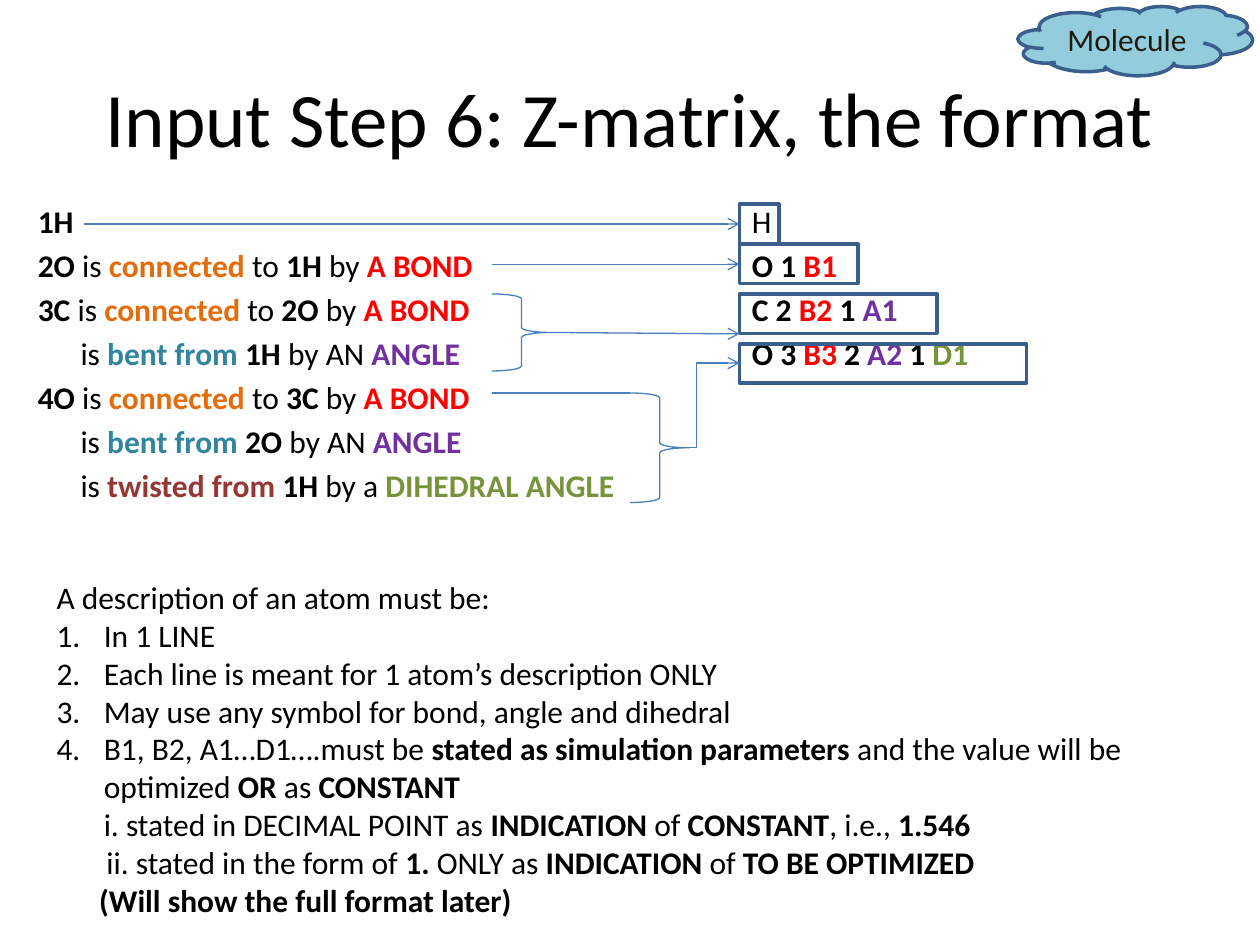
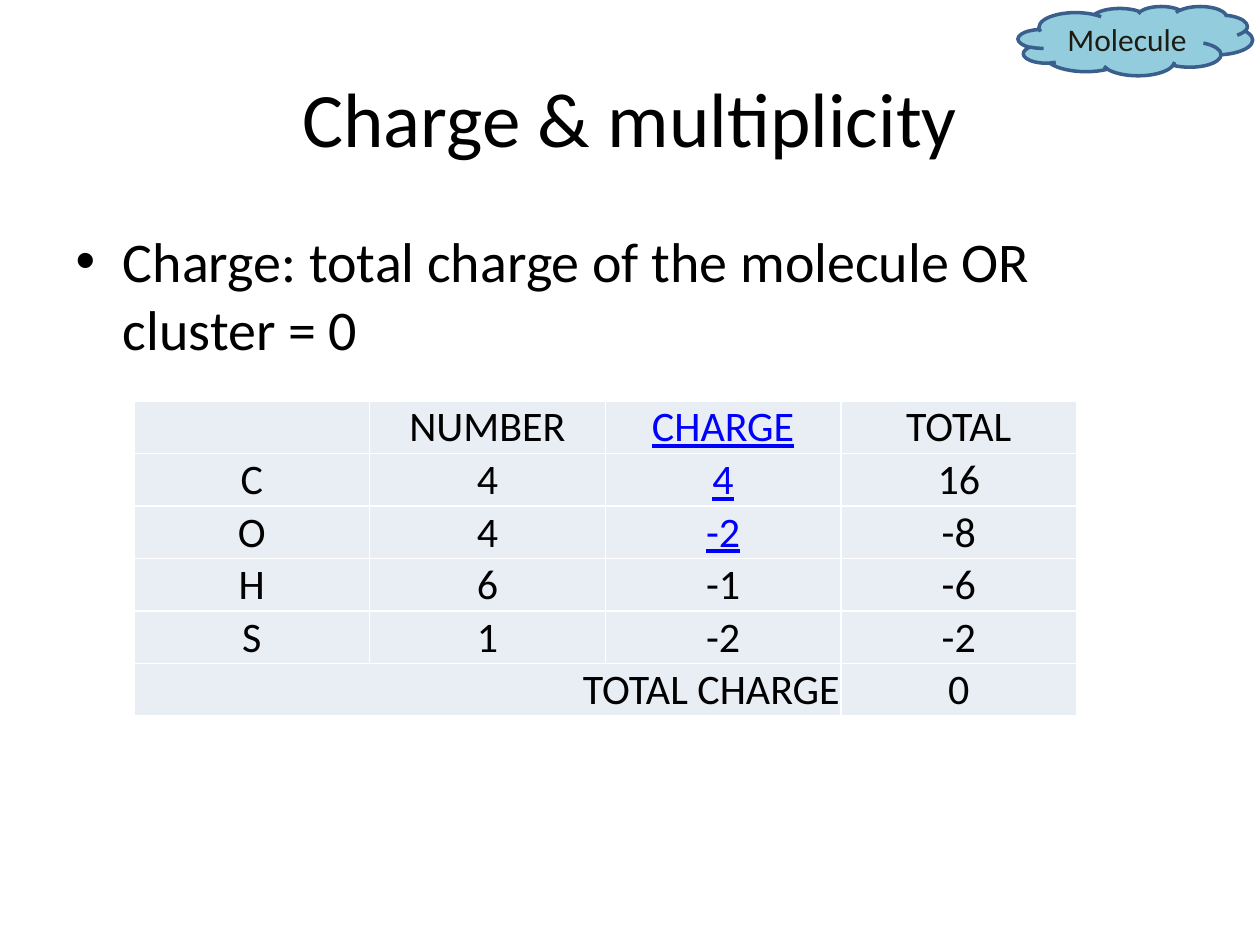
from dataclasses import dataclass

from pptx import Presentation
from pptx.dml.color import RGBColor
from pptx.enum import shapes, text
from pptx.oxml import ns, xmlchemy
from pptx.util import Pt

# Content: a line is a list of pieces, each plain text or (text, style)
TAG = "Molecule"
FORMAT_TITLE = "Input Step 6: Z-matrix, the format"
CHARGE_TITLE = "Charge & multiplicity"
CHARGE_NOTE = "Charge: total charge of the molecule OR cluster = 0"

BOND = ("A BOND", "bond")
ANGLE = ("ANGLE", "angle")
# (left indent, pieces)
ATOM_LINES = [
    (0, [("1H", "bold")]),
    (0, [("2O ", "bold"), "is ", ("connected ", "connect"), "to ", ("1H ", "bold"), "by ", BOND]),
    (0, [("3C ", "bold"), "is ", ("connected", "connect"), " to ", ("2O ", "bold"), "by ", BOND]),
    (24.4, ["is ", ("bent from ", "bend"), ("1H ", "bold"), "by AN ", ANGLE]),
    (0, [("4O ", "bold"), "is ", ("connected", "connect"), " to ", ("3C ", "bold"), "by ", BOND]),
    (24.4, ["is ", ("bent from ", "bend"), ("2O", "bold"), " by AN ", ANGLE]),
    (24.4, ["is ", ("twisted from ", "twist"), ("1H ", "bold"), "by a ",
            ("DIHEDRAL ANGLE", "dihedral")]),
]
MATRIX_LINES = [
    (0, ["H"]),
    (0, [("O 1 ", "bold"), ("B1", "bond")]),
    (0, [("C 2 ", "bold"), ("B2 ", "bond"), ("1 ", "bold"), ("A1", "angle")]),
    (0, [("O 3 ", "bold"), ("B3 ", "bond"), ("2 ", "bold"), ("A2", "angle"),
         (" 1 ", "bold"), ("D1", "dihedral")]),
]
INDICATION = ("INDICATION", "bold")
RULES_LEAD = (0, ["A description of an atom must be:"])
RULES = [
    (27, ["In 1 LINE"]),
    (27, ["Each line is meant for 1 atom’s description ONLY"]),
    (27, ["May use any symbol for bond, angle and dihedral"]),
    (27, ["B1, B2, A1…D1….must be ", ("stated as simulation parameters", "bold"),
          " and the value will be optimized ", ("OR", "bold"), " as ", ("CONSTANT", "bold"), "\n",
          "i. stated in DECIMAL POINT as ", INDICATION, " of ", ("CONSTANT", "bold"),
          ", i.e., ", ("1.546", "bold")]),
]
RULES_TAIL = [
    (28.5, ["ii. stated in the form of ", ("1.", "bold"), " ONLY as ", INDICATION, " of ",
            ("TO BE OPTIMIZED", "bold")]),
    (24.4, [("(Will show the full format later)", "bold")]),
]
CHARGES = [
    ("", "NUMBER", "CHARGE", "TOTAL"),
    ("C", "4", "4", "16"),
    ("O", "4", "-2", "-8"),
    ("H", "6", "-1", "-6"),
    ("S", "1", "-2", "-2"),
    ("TOTAL CHARGE", "", "", "0"),
]
LINKED_CELLS = {(0, 2), (1, 2), (2, 2)}


@dataclass(frozen=True)
class Theme:
    font: str = "Calibri"
    title: float = 44
    body: float = 32
    table: float = 24
    small: float = 18
    ink: str = "000000"
    link: str = "0000FF"
    cell: str = "E9EDF4"
    grid: str = "FFFFFF"
    cloud: str = "93CDDD"
    cloud_ink: str = "1E1C11"
    frame: str = "3A5F8C"
    wire: str = "4B7EBC"


THEME = Theme()
STYLE_COLOURS = {"bold": THEME.ink, "connect": "E46C0A", "bond": "FF0000", "bend": "31859C",
                 "angle": "7030A0", "twist": "953735", "dihedral": "77933C"}

# Geometry in points
MATRIX_LEFT = 422.6
FRAME_HEIGHT = 22.5
FRAMES = [(116.6, 22.5), (139.5, 67.7), (168, 113), (196.5, 164)]  # top, width
BRACES = [(360, 224.6, 34, 62.6), (281, 168, 34, 44)]
LINKS = [  # start x, start y, end x, end y, arrow
    (281, 224.6, 360, 224.6, False),
    (315, 190, MATRIX_LEFT, 190.8, True),
    (281, 151, MATRIX_LEFT, 151, True),
    (48, 128, MATRIX_LEFT, 128, True),
]
ELBOW = (394, 255.6, MATRIX_LEFT, 207.5, True)
ELBOW_BEND = 14000
TABLE_LEFT, TABLE_TOP, COLUMN_WIDTH, ROW_HEIGHT = 76.5, 229, 134.7, 29.5


def rgb(colour):
    return RGBColor.from_string(colour)


def child(parent, tag, **attributes):
    element = xmlchemy.OxmlElement(tag)
    for name, value in attributes.items():
        element.set(name, str(value))
    parent.append(element)
    return element


def set_font(font, size, colour=THEME.ink):
    font.name, font.size = THEME.font, Pt(size)
    font.color.rgb = rgb(colour)


def place(shape, left, top, width, height):
    shape.left, shape.top, shape.width, shape.height = map(Pt, (left, top, width, height))


def write_lines(frame, lines, space=0, numbered=()):
    """Fill a text frame with styled lines, numbering the chosen ones."""
    frame.word_wrap = True
    frame.auto_size = text.MSO_AUTO_SIZE.NONE
    for index, (indent, pieces) in enumerate(lines):
        paragraph = frame.paragraphs[0] if index == 0 else frame.add_paragraph()
        paragraph.space_before = Pt(space if index else 0)
        properties = paragraph._p.get_or_add_pPr()
        properties.set("marL", str(Pt(indent)))
        if index in numbered:
            properties.set("indent", str(-Pt(indent)))
            child(properties, "a:buFont", typeface="+mj-lt")
            child(properties, "a:buAutoNum", type="arabicPeriod")
        else:
            properties.set("indent", "0")
            child(properties, "a:buNone")
        set_font(paragraph.font, THEME.small)
        for piece in pieces:
            if piece == "\n":
                paragraph.add_line_break()
                continue
            words, style = (piece, None) if isinstance(piece, str) else piece
            run = paragraph.add_run()
            run.text = words
            set_font(run.font, THEME.small, STYLE_COLOURS.get(style, THEME.ink))
            run.font.bold = style is not None


def add_outline(slide, kind, box, colour, width, fill=None):
    shape = slide.shapes.add_shape(kind, *map(Pt, box))
    shape.shadow.inherit = False
    if fill:
        shape.fill.solid()
        shape.fill.fore_color.rgb = rgb(fill)
    else:
        shape.fill.background()
    shape.line.color.rgb = rgb(colour)
    shape.line.width = Pt(width)
    return shape


def add_link(slide, kind, x1, y1, x2, y2, arrow):
    link = slide.shapes.add_connector(kind, *map(Pt, (x1, y1, x2, y2)))
    link.line.color.rgb = rgb(THEME.wire)
    link.line.width = Pt(0.75)
    if arrow:
        child(link.line._get_or_add_ln(), "a:tailEnd", type="arrow")
    child(link._element.spPr, "a:effectLst")
    return link


def add_slide(deck, title):
    slide = deck.slides.add_slide(deck.slide_layouts[1])
    slide.shapes.title.text = title
    set_font(slide.shapes.title.text_frame.paragraphs[0].font, THEME.title)
    return slide


def add_tag(slide):
    cloud = add_outline(slide, shapes.MSO_SHAPE.CLOUD, (581.8, 3.6, 134, 39.6),
                        THEME.frame, 2, THEME.cloud)
    cloud.text_frame.text = TAG
    cloud.text_frame.vertical_anchor = text.MSO_ANCHOR.MIDDLE
    label = cloud.text_frame.paragraphs[0]
    label.alignment = text.PP_ALIGN.CENTER
    set_font(label.font, THEME.small, THEME.cloud_ink)


def build_format_slide(deck):
    slide = add_slide(deck, FORMAT_TITLE)
    # Atom descriptions and the matching matrix rows
    atoms = slide.placeholders[1]
    place(atoms, 14.4, 111.6, 375, 201)
    write_lines(atoms.text_frame, ATOM_LINES, space=3.6)
    matrix = slide.shapes.add_textbox(*map(Pt, (MATRIX_LEFT, 111.6, 176.4, 201)))
    write_lines(matrix.text_frame, MATRIX_LINES, space=3.6)

    # Frames, braces and links
    for top, width in FRAMES:
        add_outline(slide, shapes.MSO_SHAPE.RECTANGLE,
                    (MATRIX_LEFT, top, width, FRAME_HEIGHT), THEME.frame, 2)
    for box in BRACES:
        add_outline(slide, shapes.MSO_SHAPE.RIGHT_BRACE, box, THEME.wire, 0.75)
    for link in LINKS:
        add_link(slide, shapes.MSO_CONNECTOR.STRAIGHT, *link)
    elbow = add_link(slide, shapes.MSO_CONNECTOR.ELBOW, *ELBOW)
    bends = elbow._element.spPr.find(ns.qn("a:prstGeom")).find(ns.qn("a:avLst"))
    child(bends, "a:gd", name="adj1", fmla=f"val {ELBOW_BEND}")

    # Rules
    rules = slide.shapes.add_textbox(*map(Pt, (25.2, 326.9, 669, 225)))
    write_lines(rules.text_frame, [RULES_LEAD, *RULES, *RULES_TAIL],
                numbered=range(1, len(RULES) + 1))
    add_tag(slide)


def format_cell(cell, words, linked, alignment):
    cell.fill.solid()
    cell.fill.fore_color.rgb = rgb(THEME.cell)
    cell.margin_left = cell.margin_right = cell.margin_top = Pt(0.72)
    cell.margin_bottom = 0
    cell.vertical_anchor = text.MSO_ANCHOR.MIDDLE
    cell.text = words
    paragraph = cell.text_frame.paragraphs[0]
    paragraph.alignment = alignment
    set_font(paragraph.font, THEME.table, THEME.link if linked else THEME.ink)
    paragraph.font.underline = linked
    # Borders come before the fill in the cell properties
    properties = cell._tc.get_or_add_tcPr()
    for position, side in enumerate(("a:lnL", "a:lnR", "a:lnT", "a:lnB")):
        border = child(properties, side, w=Pt(1))
        child(child(border, "a:solidFill"), "a:srgbClr", val=THEME.grid)
        properties.insert(position, border)


def build_charge_slide(deck):
    slide = add_slide(deck, CHARGE_TITLE)
    note = slide.placeholders[1]
    note.text = CHARGE_NOTE
    set_font(note.text_frame.paragraphs[0].font, THEME.body)

    # Charge table
    rows, columns = len(CHARGES), len(CHARGES[0])
    table = slide.shapes.add_table(
        rows, columns, Pt(TABLE_LEFT), Pt(TABLE_TOP),
        Pt(COLUMN_WIDTH * columns), Pt(ROW_HEIGHT * rows)).table
    table.first_row = table.horz_banding = False
    for r, row in enumerate(CHARGES):
        for c, words in enumerate(row):
            is_sum_label = (r, c) == (rows - 1, 0)
            alignment = text.PP_ALIGN.RIGHT if is_sum_label else text.PP_ALIGN.CENTER
            format_cell(table.cell(r, c), words, (r, c) in LINKED_CELLS, alignment)
    table.cell(rows - 1, 0).merge(table.cell(rows - 1, columns - 2))
    add_tag(slide)


def main():
    deck = Presentation()
    deck.slide_width, deck.slide_height = Pt(720), Pt(540)
    build_format_slide(deck)
    build_charge_slide(deck)
    deck.save("out.pptx")


if __name__ == "__main__":
    main()
